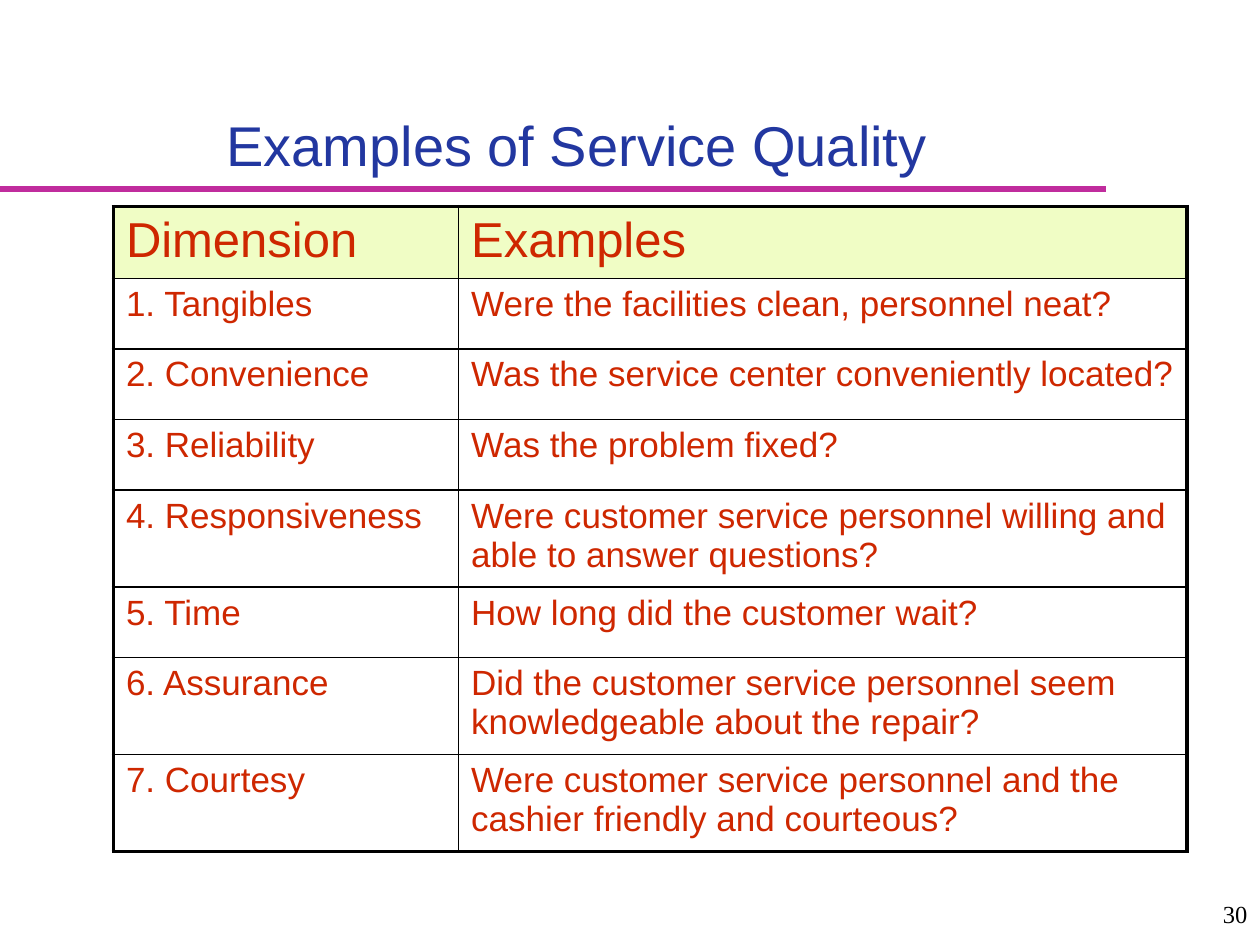
from lxml.etree import SubElement
from pptx import Presentation
from pptx.dml.color import RGBColor
from pptx.enum.shapes import MSO_CONNECTOR, MSO_SHAPE
from pptx.enum.text import MSO_ANCHOR, PP_ALIGN
from pptx.oxml import parse_xml
from pptx.oxml.ns import nsdecls, qn
from pptx.util import Inches, Pt

COLORS = {
    "title": "2237A0",
    "rule": "C02C9D",
    "header": "F0FDC5",
    "text": "CE2700",
    "black": "000000",
    "white": "FFFFFF",
}
ROWS = [
    ("Dimension", "Examples"),
    ("1. Tangibles", "Were the facilities clean, personnel neat?"),
    ("2. Convenience", "Was the service center conveniently located?"),
    ("3. Reliability", "Was the problem fixed?"),
    ("4. Responsiveness", "Were customer service personnel willing and able to answer questions?"),
    ("5. Time", "How long did the customer wait?"),
    ("6. Assurance", "Did the customer service personnel seem knowledgeable about the repair?"),
    ("7. Courtesy", "Were customer service personnel and the cashier friendly and courteous?"),
]
COL_WIDTHS = [2.74, 5.78]
ROW_HEIGHTS = [0.57, 0.56, 0.56, 0.56, 0.77, 0.56, 0.77, 0.77]
OUTER, INNER = 2.25, 1


def rgb(name):
    return RGBColor.from_string(COLORS[name])


def add_run(p, text, size, color, font="Arial"):
    r = p.add_run()
    r.text = text
    r.font.size = Pt(size)
    r.font.name = font
    r.font.color.rgb = rgb(color)


def add_title(s, text):
    title = s.shapes.title
    title.left, title.top = Inches(0.33), Inches(0.25)
    title.width, title.height = Inches(8.5), Inches(1.21)
    tf = title.text_frame
    tf.vertical_anchor = MSO_ANCHOR.BOTTOM
    p = tf.paragraphs[0]
    p.alignment = PP_ALIGN.CENTER
    add_run(p, text, 32, "title")


def add_rule(s):
    line = s.shapes.add_connector(
        MSO_CONNECTOR.STRAIGHT, 0, Inches(1.5), Inches(8.78), Inches(1.5))
    line.line.color.rgb = rgb("rule")
    line.line.width = Pt(4)
    SubElement(line._element.spPr, qn("a:effectLst"))


def add_page_number(s, number):
    sp = s.shapes.add_shape(
        MSO_SHAPE.RECTANGLE, Inches(7.67), Inches(7), Inches(2.33), Inches(0.5))
    sp.shadow.inherit = False
    sp.fill.background()
    sp.line.color.rgb = rgb("white")
    sp.line.width = Pt(0.75)
    tf = sp.text_frame
    tf.word_wrap = False
    tf.vertical_anchor = MSO_ANCHOR.MIDDLE
    p = tf.paragraphs[0]
    p.alignment = PP_ALIGN.RIGHT
    add_run(p, number, 14, "black", "Times New Roman")


def set_borders(cell, widths):
    """Draw the borders; widths are points for left, right, top and bottom."""
    tc_pr = cell._tc.get_or_add_tcPr()
    for i, (side, width) in enumerate(zip("LRTB", widths)):
        tc_pr.insert(i, parse_xml(
            f'<a:ln{side} {nsdecls("a")} w="{Pt(width)}"><a:solidFill>'
            f'<a:srgbClr val="{COLORS["black"]}"/></a:solidFill></a:ln{side}>'))


def add_quality_table(s):
    last_row, last_col = len(ROWS) - 1, len(COL_WIDTHS) - 1
    table = s.shapes.add_table(
        len(ROWS), len(COL_WIDTHS), Inches(0.9), Inches(1.64),
        Inches(sum(COL_WIDTHS)), Inches(sum(ROW_HEIGHTS))).table
    table.first_row = table.horz_banding = False
    for col, width in zip(table.columns, COL_WIDTHS):
        col.width = Inches(width)
    for row, height in zip(table.rows, ROW_HEIGHTS):
        row.height = Inches(height)
    for i, texts in enumerate(ROWS):
        for j, text in enumerate(texts):
            cell = table.cell(i, j)
            if i == 0:
                cell.fill.solid()
                cell.fill.fore_color.rgb = rgb("header")
            else:
                cell.fill.background()
            on_edge = (j == 0, j == last_col, i == 0, i == last_row)
            set_borders(cell, [OUTER if edge else INNER for edge in on_edge])
            add_run(cell.text_frame.paragraphs[0], text, 28 if i == 0 else 20, "text")


def main():
    prs = Presentation()
    prs.slide_width, prs.slide_height = Inches(10), Inches(7.5)
    s = prs.slides.add_slide(prs.slide_layouts.get_by_name("Title Only"))
    add_rule(s)
    add_page_number(s, "30")
    add_title(s, "Examples of Service Quality")
    add_quality_table(s)
    prs.save("out.pptx")


if __name__ == "__main__":
    main()
